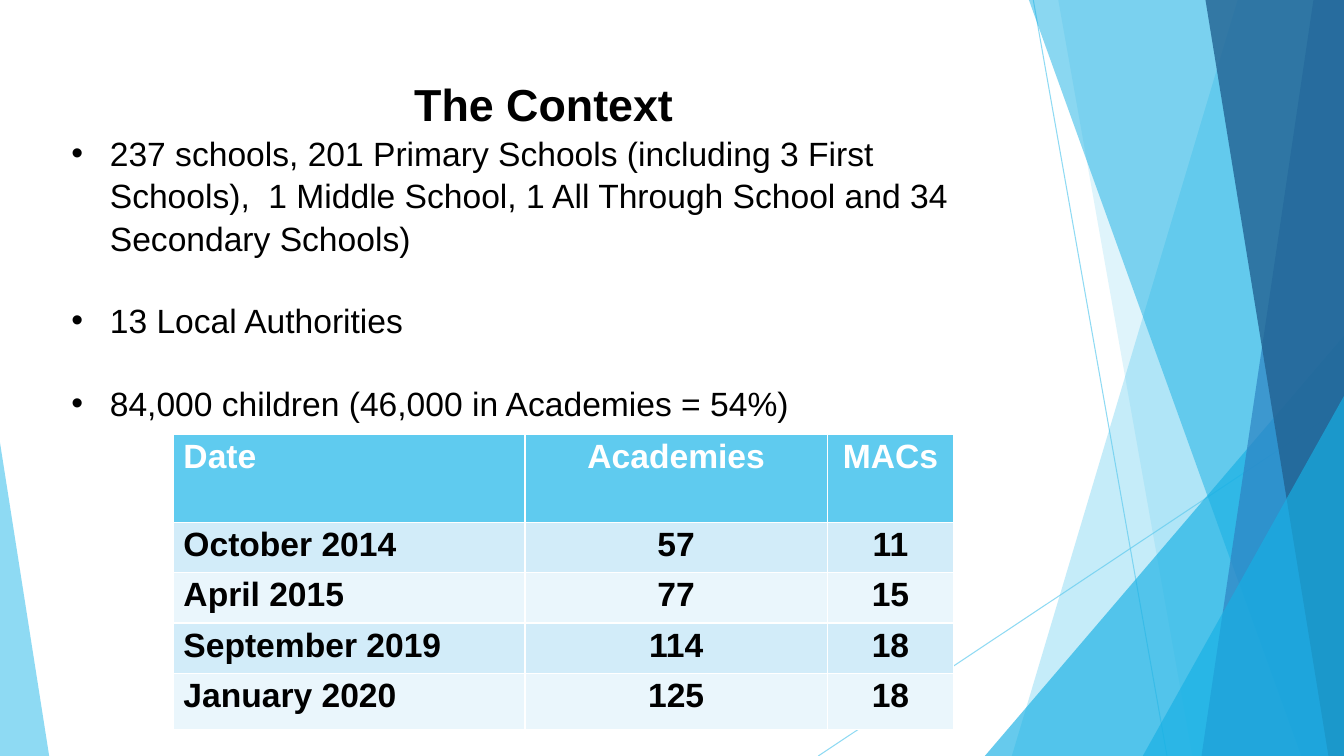
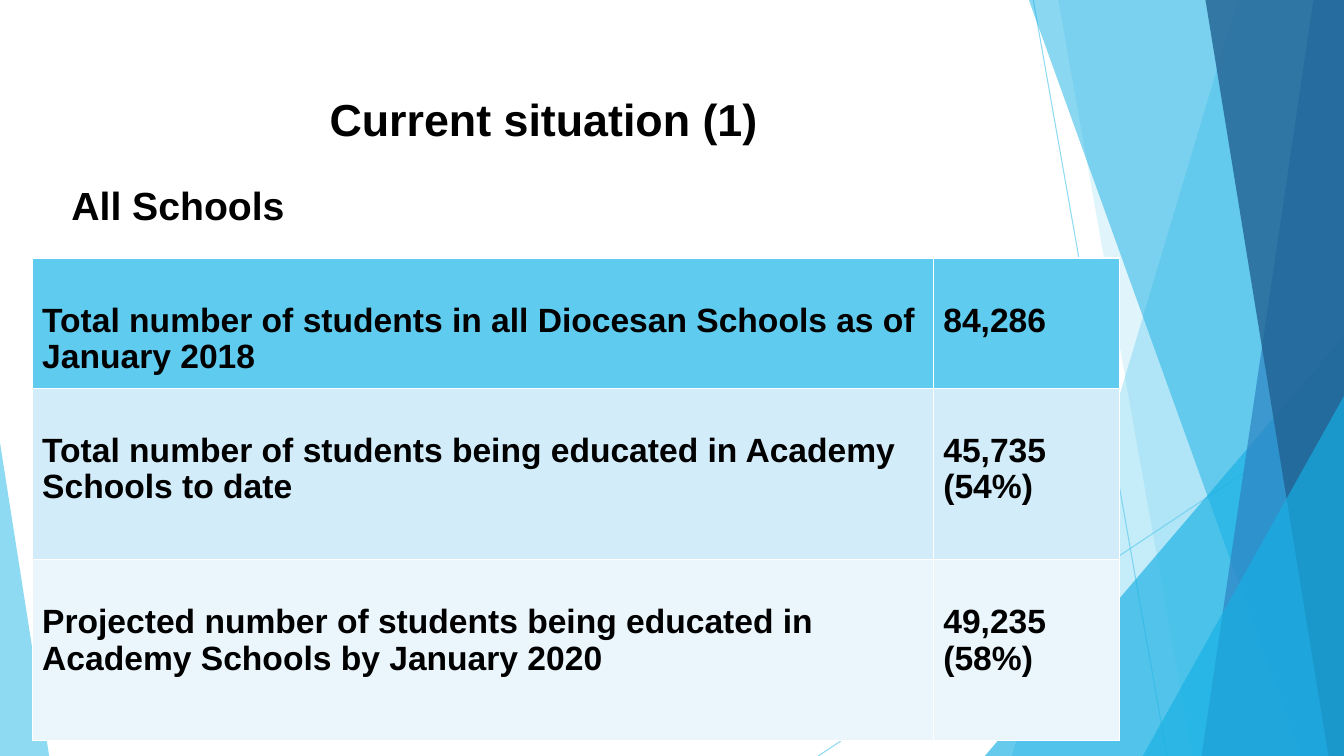
"""Builds two slides on schools and academies with a shared faceted background."""
from pptx import Presentation
from pptx.dml.color import RGBColor
from pptx.enum.shapes import MSO_CONNECTOR, MSO_SHAPE
from pptx.enum.text import MSO_ANCHOR, PP_ALIGN
from pptx.oxml.ns import qn
from pptx.util import Cm, Pt
from lxml import etree

STRAIGHT = MSO_CONNECTOR.STRAIGHT
TRIANGLE = MSO_SHAPE.ISOSCELES_TRIANGLE
TOP = MSO_ANCHOR.TOP
LEFT, CENTER = PP_ALIGN.LEFT, PP_ALIGN.CENTER

WIDTH, HEIGHT = 33.87, 19.05
FONT = "Arial"
BLACK, WHITE = "000000", "FFFFFF"
SKY, CYAN, BLUE, NAVY = "5FCBEF", "17B0E4", "2E83C3", "226292"
HEADER, ROW_FILLS = SKY, ("D2ECF9", "EAF6FC")
INDENT = 0.97

RAYS = [(26.04, 0, 29.41, HEIGHT), (WIDTH, 10.24, 20.62, HEIGHT)]
FACETS = [
    ("band", 31.19, 25.5, SKY, 36),
    ("band", 26.67, 30.05, SKY, 20),
    ("corner", 24.82, 8.46, CYAN, 66),
    ("band", 25.93, 32.79, CYAN, 50),
    ("band", 33.1, 30.28, BLUE, 70),
    ("band", 30.38, 33.48, NAVY, 80),
    ("corner", 28.8, 9.98, CYAN, 66),
]
LEFT_WEDGE = (0, 11.15, 1.24, 0, SKY, 70)

TITLE = {"size": 32, "bold": True, "align": CENTER}
SUBTITLE = {"size": 28, "bold": True, "before": 24}
BULLET = {"size": 24, "bullet": True}
SPACED_BULLET = {**BULLET, "before": 28.8}

SLIDES = [
    {
        "box": (1.55, 1.75, 24.31, 9.65),
        "text": [
            ("The Context", TITLE),
            ("237 schools, 201 Primary Schools (including 3 First Schools),  "
             "1 Middle School, 1 All Through School and 34 Secondary Schools)", BULLET),
            ("13 Local Authorities", SPACED_BULLET),
            ("84,000 children (46,000 in Academies = 54%)", SPACED_BULLET),
        ],
        "table": {
            "at": (4.37, 10.95),
            "cols": [8.86, 7.62, 3.18],
            "rows": [2.21, 1.27, 1.27, 1.27, 1.42],
            "aligns": [LEFT, CENTER, CENTER],
            "header_color": WHITE,
            "margin_top": 0.13,
            "cells": [
                ("Date", "Academies", "MACs"),
                ("October 2014", "57", "11"),
                ("April 2015", "77", "15"),
                ("September 2019", "114", "18"),
                ("January 2020", "125", "18"),
            ],
        },
    },
    {
        "box": (1.55, 2.11, 24.31, 5.56),
        "text": [("Current situation (1)", TITLE), ("All Schools", SUBTITLE)],
        "table": {
            "at": (0.81, 6.5),
            "cols": [22.71, 4.7],
            "rows": [3.28, 4.32, 4.55],
            "aligns": [LEFT, LEFT],
            "header_color": BLACK,
            "margin_top": 1.14,
            "cells": [
                ("Total number of students in all Diocesan Schools as of January 2018",
                 "84,286"),
                ("Total number of students being educated in Academy Schools to date",
                 "45,735\n(54%)"),
                ("Projected number of students being educated in Academy Schools "
                 "by January 2020", "49,235\n(58%)"),
            ],
        },
    },
]


def rgb(value):
    return RGBColor.from_string(value)


def set_alpha(fill_owner, percent):
    color = next(fill_owner.iter(qn("a:srgbClr")))
    etree.SubElement(color, qn("a:alpha")).set("val", str(percent * 1000))


def paint(sp, color, alpha):
    sp.shadow.inherit = False
    sp.fill.solid()
    sp.fill.fore_color.rgb = rgb(color)
    sp.line.fill.background()
    set_alpha(sp._element.spPr, alpha)


def add_ray(s, ends):
    line = s.shapes.add_connector(STRAIGHT, *map(Cm, ends))
    line.line.color.rgb = rgb(SKY)
    line.line.width = Pt(0.75)
    spPr = line._element.spPr
    set_alpha(spPr, 70)
    etree.SubElement(spPr, qn("a:effectLst"))


def add_band(s, top_x, bottom_x, color, alpha):
    pen = s.shapes.build_freeform(Cm(top_x), 0, scale=1.0)
    corners = [(WIDTH, 0), (WIDTH, HEIGHT), (bottom_x, HEIGHT)]
    pen.add_line_segments([(Cm(x), Cm(y)) for x, y in corners], close=True)
    paint(pen.convert_to_shape(), color, alpha)


def add_wedge(s, left, top, right, apex, color, alpha):
    sp = s.shapes.add_shape(TRIANGLE, *map(Cm, (left, top, right - left, HEIGHT - top)))
    sp.adjustments[0] = apex
    paint(sp, color, alpha)


def add_background(s):
    for ends in RAYS:
        add_ray(s, ends)
    for kind, a, b, color, alpha in FACETS:
        if kind == "band":
            add_band(s, a, b, color, alpha)
        else:
            add_wedge(s, a, b, WIDTH, 1, color, alpha)
    add_wedge(s, *LEFT_WEDGE)


def style_font(font, size, bold, color):
    for name, value in {"name": FONT, "size": Pt(size), "bold": bold}.items():
        setattr(font, name, value)
    font.color.rgb = rgb(color)


def add_bullet(p):
    pPr = p._p.get_or_add_pPr()
    pPr.set("marL", str(Cm(INDENT)))
    pPr.set("indent", str(-Cm(INDENT)))
    etree.SubElement(pPr, qn("a:buFont")).set("typeface", FONT)
    etree.SubElement(pPr, qn("a:buChar")).set("char", "•")


def add_text(s, box, items):
    tf = s.shapes.add_textbox(*map(Cm, box)).text_frame
    tf.word_wrap = True
    for i, (text, fmt) in enumerate(items):
        p = tf.add_paragraph() if i else tf.paragraphs[0]
        r = p.add_run()
        r.text = text
        style_font(r.font, fmt["size"], fmt.get("bold", False), BLACK)
        layout = {"alignment": fmt.get("align", LEFT), "line_spacing": 1.05,
                  "space_before": Pt(fmt.get("before", 0))}
        for name, value in layout.items():
            setattr(p, name, value)
        if fmt.get("bullet"):
            add_bullet(p)


def fill_cell(cell, text, fill, color, align, margin_top):
    cell.fill.solid()
    cell.fill.fore_color.rgb = rgb(fill)
    cell.vertical_anchor = TOP
    cell.margin_top = Cm(margin_top)
    cell.text = text
    for p in cell.text_frame.paragraphs:
        p.alignment = align
        p.line_spacing = 0.97
        for r in p.runs:
            style_font(r.font, 24, True, color)


def add_grid(s, spec):
    cols, rows = spec["cols"], spec["rows"]
    area = (*spec["at"], sum(cols), sum(rows))
    table = s.shapes.add_table(len(rows), len(cols), *map(Cm, area)).table
    for column, width in zip(table.columns, cols):
        column.width = Cm(width)
    for i, (height, texts) in enumerate(zip(rows, spec["cells"])):
        table.rows[i].height = Cm(height)
        fill = ROW_FILLS[(i - 1) % 2] if i else HEADER
        color = BLACK if i else spec["header_color"]
        for j, (text, align) in enumerate(zip(texts, spec["aligns"])):
            fill_cell(table.cell(i, j), text, fill, color, align, spec["margin_top"])


def main():
    prs = Presentation()
    prs.slide_width, prs.slide_height = Cm(WIDTH), Cm(HEIGHT)
    for content in SLIDES:
        s = prs.slides.add_slide(prs.slide_layouts[6])
        add_background(s)
        add_text(s, content["box"], content["text"])
        add_grid(s, content["table"])
    prs.save("out.pptx")


if __name__ == "__main__":
    main()
